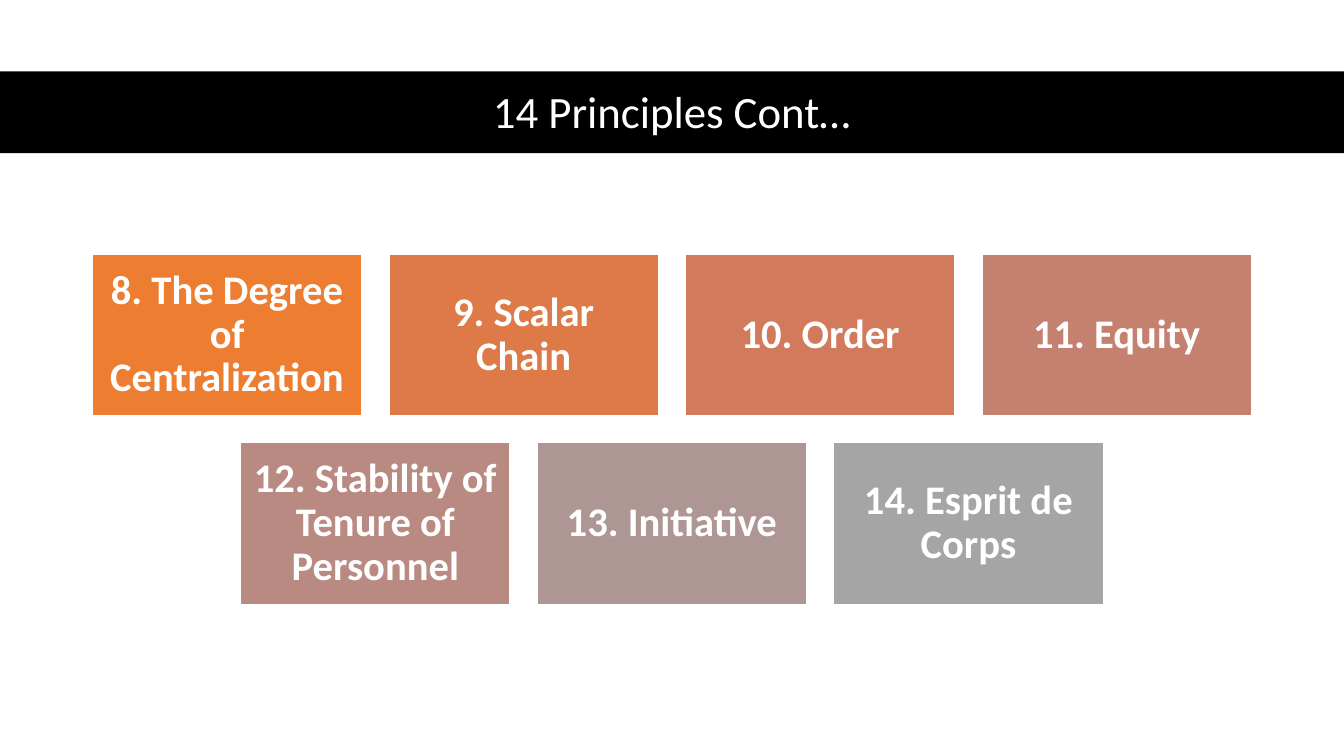
import pptx
import pptx.dml.color
import pptx.enum.shapes
import pptx.enum.text
import pptx.util

Pt = pptx.util.Pt
RGBColor = pptx.dml.color.RGBColor

FONT = "Calibri"
WHITE = RGBColor(0xFF, 0xFF, 0xFF)
BLACK = RGBColor(0x00, 0x00, 0x00)

SLIDE_WIDTH, SLIDE_HEIGHT = 960, 540
CARDS_PER_ROW = 4
GAP_RATIO = 0.1      # gap between cards, as a share of card width
HEIGHT_RATIO = 0.6   # card height, as a share of card width

PRINCIPLES = [
    ("8. The Degree of Centralization", RGBColor(0xED, 0x7D, 0x31)),
    ("9. Scalar Chain", RGBColor(0xDE, 0x7A, 0x47)),
    ("10. Order", RGBColor(0xD1, 0x7B, 0x5C)),
    ("11. Equity", RGBColor(0xC4, 0x81, 0x70)),
    ("12. Stability of Tenure of Personnel", RGBColor(0xB9, 0x8A, 0x82)),
    ("13. Initiative", RGBColor(0xAE, 0x96, 0x94)),
    ("14. Esprit de Corps", RGBColor(0xA5, 0xA5, 0xA5)),
]


def add_rectangle(slide, left, top, width, height, fill):
    shape = slide.shapes.add_shape(
        pptx.enum.shapes.MSO_SHAPE.RECTANGLE,
        Pt(left), Pt(top), Pt(width), Pt(height))
    shape.shadow.inherit = False
    shape.fill.solid()
    shape.fill.fore_color.rgb = fill
    return shape


def write_centred(shape, text, size, bold=False):
    frame = shape.text_frame
    frame.word_wrap = True
    frame.vertical_anchor = pptx.enum.text.MSO_ANCHOR.MIDDLE
    paragraph = frame.paragraphs[0]
    paragraph.text = text
    paragraph.alignment = pptx.enum.text.PP_ALIGN.CENTER
    paragraph.line_spacing = 0.9
    paragraph.font.name = FONT
    paragraph.font.size = Pt(size)
    paragraph.font.bold = bold
    paragraph.font.color.rgb = WHITE


def add_title_band(slide, left, top, width, height):
    band = add_rectangle(slide, left, top, width, height, BLACK)
    band.line.fill.background()
    # The title sits slightly below the top of the band
    margin, drop = 66, 2
    title = slide.shapes.add_textbox(
        Pt(left + margin), Pt(top + drop),
        Pt(width - 2 * margin), Pt(height - drop))
    write_centred(title, "14 Principles Cont…", 32)


def add_card(slide, left, top, width, height, text, fill):
    card = add_rectangle(slide, left, top, width, height, fill)
    card.line.color.rgb = WHITE
    card.line.width = Pt(1)
    frame = card.text_frame
    frame.margin_left = frame.margin_right = Pt(8.7)
    frame.margin_top = frame.margin_bottom = Pt(8.7)
    write_centred(card, text, 29, bold=True)


def add_principle_grid(slide, left, top, width):
    card_width = width / (CARDS_PER_ROW + (CARDS_PER_ROW - 1) * GAP_RATIO)
    card_height = card_width * HEIGHT_RATIO
    gap = card_width * GAP_RATIO
    for start in range(0, len(PRINCIPLES), CARDS_PER_ROW):
        row = PRINCIPLES[start:start + CARDS_PER_ROW]
        # Each row is centred in the grid
        row_width = len(row) * (card_width + gap) - gap
        row_left = left + (width - row_width) / 2
        row_top = top + start // CARDS_PER_ROW * (card_height + gap)
        for column, (text, fill) in enumerate(row):
            add_card(slide, row_left + column * (card_width + gap), row_top,
                     card_width, card_height, text, fill)


def main():
    presentation = pptx.Presentation()
    presentation.slide_width = Pt(SLIDE_WIDTH)
    presentation.slide_height = Pt(SLIDE_HEIGHT)
    slide = presentation.slides.add_slide(presentation.slide_layouts[6])
    add_title_band(slide, 0, 51, SLIDE_WIDTH, 58.5)
    add_principle_grid(slide, 66, 181.5, 828)
    presentation.save("out.pptx")


if __name__ == "__main__":
    main()
